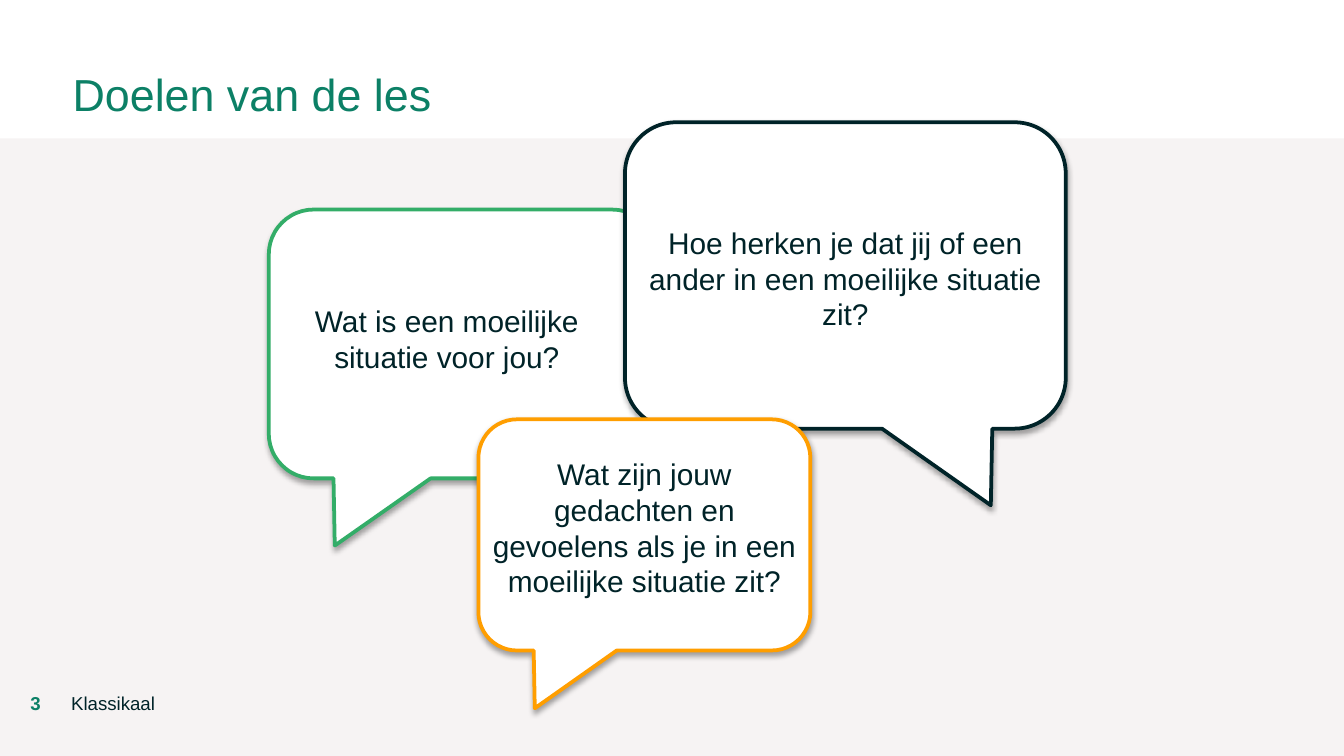
from lxml import etree
from pptx import Presentation, util as u
from pptx.dml.color import RGBColor
from pptx.enum import shapes, text
from pptx.oxml import parse_xml
from pptx.oxml.ns import nsdecls, qn

GREEN, DARK, WHITE = "0C8066", "002328", "FFFFFF"


def color(hex_text):
    return RGBColor.from_string(hex_text)


class Deck:
    font = "Arial"

    def __init__(self, width):
        self.prs = Presentation()
        self.prs.slide_width = u.Inches(width)
        self.prs.slide_height = u.Inches(width * 9 / 16)
        self.s = self.prs.slides.add_slide(self.prs.slide_layouts[6])

    def shape(self, kind, box, fill):
        sp = self.s.shapes.add_shape(kind, *map(u.Inches, box))
        sp.shadow.inherit = False
        sp.fill.solid()
        sp.fill.fore_color.rgb = color(fill)
        return sp

    def band(self, box, fill, opacity):
        sp = self.shape(shapes.MSO_SHAPE.RECTANGLE, box, fill)
        sp.line.fill.background()
        clr = sp._element.spPr.find(qn("a:solidFill"))[0]
        etree.SubElement(clr, qn("a:alpha")).set("val", str(opacity * 1000))

    def bubble(self, box, tail_x, line):
        """Speech bubble whose tail points down, left or right of centre."""
        sp = self.shape(shapes.MSO_SHAPE.ROUNDED_RECTANGULAR_CALLOUT, box, WHITE)
        sp.adjustments[0] = tail_x
        sp.adjustments[1] = 0.75
        sp.line.color.rgb = color(line)
        sp.line.width = u.Pt(2)
        # Soft shadow straight below
        spPr = sp._element.spPr
        spPr.replace(spPr.find(qn("a:effectLst")), parse_xml(
            f'<a:effectLst {nsdecls("a")}>'
            f'<a:outerShdw blurRad="{u.Pt(3.1)}" dist="{u.Pt(1.8)}" dir="5400000" rotWithShape="0">'
            '<a:srgbClr val="000000"><a:alpha val="35000"/></a:srgbClr>'
            '</a:outerShdw></a:effectLst>'))

    def label(self, box, words, size, ink=DARK, bold=False, centred=False):
        tf = self.s.shapes.add_textbox(*map(u.Inches, box)).text_frame
        tf.word_wrap = True
        tf.margin_left = tf.margin_right = tf.margin_top = tf.margin_bottom = 0
        p = tf.paragraphs[0]
        p.text = words
        p.alignment = text.PP_ALIGN.CENTER if centred else text.PP_ALIGN.LEFT
        p.font.name = self.font
        p.font.size = u.Pt(size)
        p.font.bold = bold
        p.font.color.rgb = color(ink)


def main():
    deck = Deck(10)

    # Background, title and footer
    deck.band((-0.09, 1.03, 10.19, 4.67), "E3DAD8", 30)
    deck.label((0.09, 5.15, 0.35, 0.2), "3", 10, GREEN, bold=True, centred=True)
    deck.label((0.54, 0.5, 8.98, 0.64), "Doelen van de les", 24, GREEN)
    deck.label((0.53, 5.15, 4.19, 0.26), "Klassikaal", 10)

    # Speech bubbles: outline, tail side, line colour, text box, question
    bubbles = [
        ((2, 1.56, 2.89, 2), -0.33, "33AD68", (2, 2.25, 2.65, 0.68),
         "Wat is een moeilijke situatie voor jou?"),
        ((4.65, 0.91, 3.28, 2.28), 0.33, DARK, (4.69, 1.67, 3.2, 0.84),
         "Hoe herken je dat jij of een ander in een moeilijke situatie zit?"),
        ((3.56, 3.12, 2.47, 1.72), -0.33, "FF9E00", (3.61, 3.39, 2.37, 1.19),
         "Wat zijn jouw gedachten en gevoelens als je in een moeilijke situatie zit?"),
    ]
    for box, tail_x, line, text_box, question in bubbles:
        deck.bubble(box, tail_x, line)
        deck.label(text_box, question, 16, centred=True)

    deck.prs.save("out.pptx")


if __name__ == "__main__":
    main()
